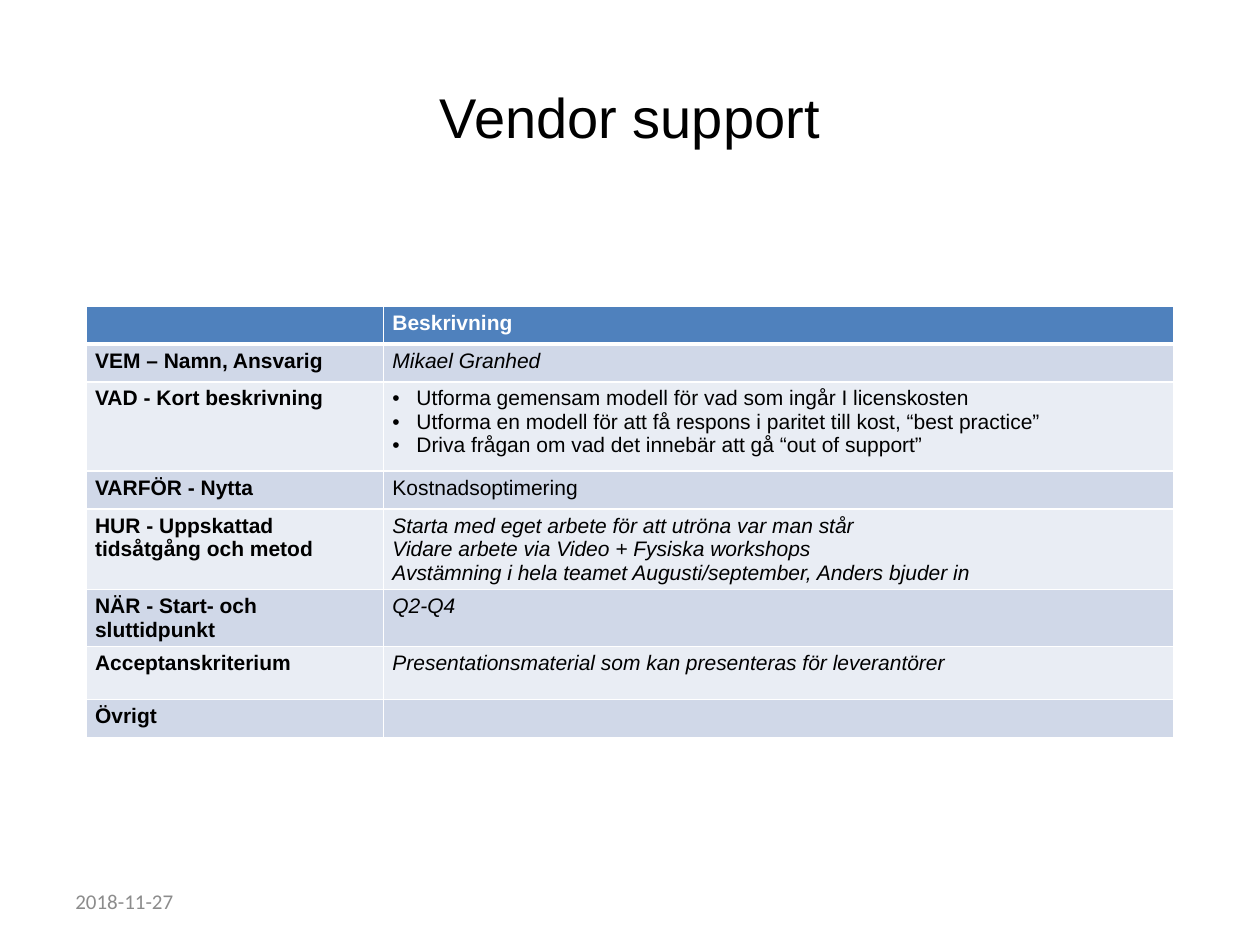
from lxml.etree import SubElement
from pptx import Presentation
from pptx.dml.color import RGBColor
from pptx.enum.text import MSO_ANCHOR, PP_ALIGN
from pptx.oxml.ns import qn
from pptx.util import Inches, Pt

WIDTH, HEIGHT = 10, 7.5
HEADER_FILL, BAND_FILLS = "4F81BD", ("D0D8E8", "E9EDF4")
COLUMNS = (2.36, 6.27)
BULLET_INDENT = 0.19

# label, description paragraphs, row height, format of the description
ROWS = (
    ("", ["Beskrivning"], 0.3, {"bold": True}),
    ("VEM – Namn, Ansvarig", ["Mikael Granhed"], 0.3, {"italic": True}),
    ("VAD - Kort beskrivning", [
        "Utforma gemensam modell för vad som ingår I licenskosten",
        "Utforma en modell för att få respons i paritet till kost, “best practice”",
        "Driva frågan om vad det innebär att gå “out of support”",
    ], 0.71, {}),
    ("VARFÖR - Nytta", ["Kostnadsoptimering"], 0.3, {}),
    ("HUR - Uppskattad tidsåtgång och metod", [
        "Starta med eget arbete för att utröna var man står\n"
        "Vidare arbete via Video + Fysiska workshops\n"
        "Avstämning i hela teamet Augusti/september, Anders bjuder in",
    ], 0.3, {"italic": True}),
    ("NÄR - Start- och sluttidpunkt", ["Q2-Q4"], 0.3, {"italic": True}),
    ("Acceptanskriterium",
     ["Presentationsmaterial som kan presenteras för leverantörer"],
     0.42, {"italic": True}),
    ("Övrigt", [""], 0.3, {}),
)


def rgb(colour):
    return RGBColor.from_string(colour)


def set_values(target, values):
    for name, value in values.items():
        setattr(target, name, value)


def write_paragraph(paragraph, text, size, colour="000000", name="Arial", **values):
    paragraph.text = text
    for run in paragraph.runs:
        set_values(run.font, {"size": Pt(size), "name": name, **values})
        run.font.color.rgb = rgb(colour)
    if not text:
        # An empty line takes its height from its end mark
        SubElement(paragraph._p, qn("a:endParaRPr"), sz=str(size * 100))


def add_bullet(paragraph):
    properties = paragraph._p.get_or_add_pPr()
    indent = Inches(BULLET_INDENT)
    properties.set("marL", str(indent))
    properties.set("indent", str(-indent))
    SubElement(properties, qn("a:buFont"), typeface="Arial")
    SubElement(properties, qn("a:buChar"), char="•")


def add_borders(cell, bottom_width):
    widths = {"L": 1, "R": 1, "T": 1, "B": bottom_width}
    for side, width in widths.items():
        line = SubElement(cell._tc.get_or_add_tcPr(), qn(f"a:ln{side}"), w=str(Pt(width)))
        fill = SubElement(line, qn("a:solidFill"))
        SubElement(fill, qn("a:srgbClr"), val="FFFFFF")


def fill_cell(cell, texts, fill, bottom_width, **values):
    set_values(cell, {"margin_left": Inches(0.07), "margin_right": Inches(0.07),
                      "margin_top": Inches(0.04), "margin_bottom": Inches(0.04)})
    add_borders(cell, bottom_width)
    cell.fill.solid()
    cell.fill.fore_color.rgb = rgb(fill)
    frame = cell.text_frame
    for index, text in enumerate(texts):
        paragraph = frame.add_paragraph() if index else frame.paragraphs[0]
        if len(texts) > 1:
            add_bullet(paragraph)
        write_paragraph(paragraph, text, 12, **values)


def place(shape, left, top, width, height):
    set_values(shape, {"left": Inches(left), "top": Inches(top),
                       "width": Inches(width), "height": Inches(height)})


def add_title(slide, box):
    title = slide.shapes.title
    place(title, *box)
    title.text_frame.vertical_anchor = MSO_ANCHOR.MIDDLE
    paragraph = title.text_frame.paragraphs[0]
    write_paragraph(paragraph, "Vendor support", 32)
    paragraph.alignment = PP_ALIGN.CENTER


def add_plan_table(slide, left, top):
    height = sum(row[2] for row in ROWS)
    frame = slide.shapes.add_table(
        len(ROWS), len(COLUMNS), Inches(left), Inches(top),
        Inches(sum(COLUMNS)), Inches(height))
    table = frame.table
    table.horz_banding = False
    for column, width in zip(table.columns, COLUMNS):
        column.width = Inches(width)
    for index, (label, texts, row_height, values) in enumerate(ROWS):
        table.rows[index].height = Inches(row_height)
        header = index == 0
        fill = HEADER_FILL if header else BAND_FILLS[(index - 1) % 2]
        colour = "FFFFFF" if header else "000000"
        bottom = 3 if header else 1
        formats = {"bold": False, "italic": False, **values}
        fill_cell(table.cell(index, 0), [label], fill, bottom, colour=colour, bold=True)
        fill_cell(table.cell(index, 1), texts, fill, bottom, colour=colour, **formats)


def add_date(slide, box):
    frame = slide.shapes.add_textbox(*map(Inches, box)).text_frame
    set_values(frame, {"word_wrap": True, "vertical_anchor": MSO_ANCHOR.MIDDLE})
    write_paragraph(frame.paragraphs[0], "2018-11-27", 12, "8C8C8C", "Calibri")


def main():
    presentation = Presentation()
    set_values(presentation, {"slide_width": Inches(WIDTH), "slide_height": Inches(HEIGHT)})
    slide = presentation.slides.add_slide(presentation.slide_layouts[5])
    margin = WIDTH * 0.05
    add_title(slide, (margin, HEIGHT * 0.04, WIDTH - 2 * margin, 1.25))
    add_plan_table(slide, (WIDTH - sum(COLUMNS)) / 2, 2.43)
    add_date(slide, (margin, 6.95, 2.33, 0.4))
    presentation.save("out.pptx")


if __name__ == "__main__":
    main()
